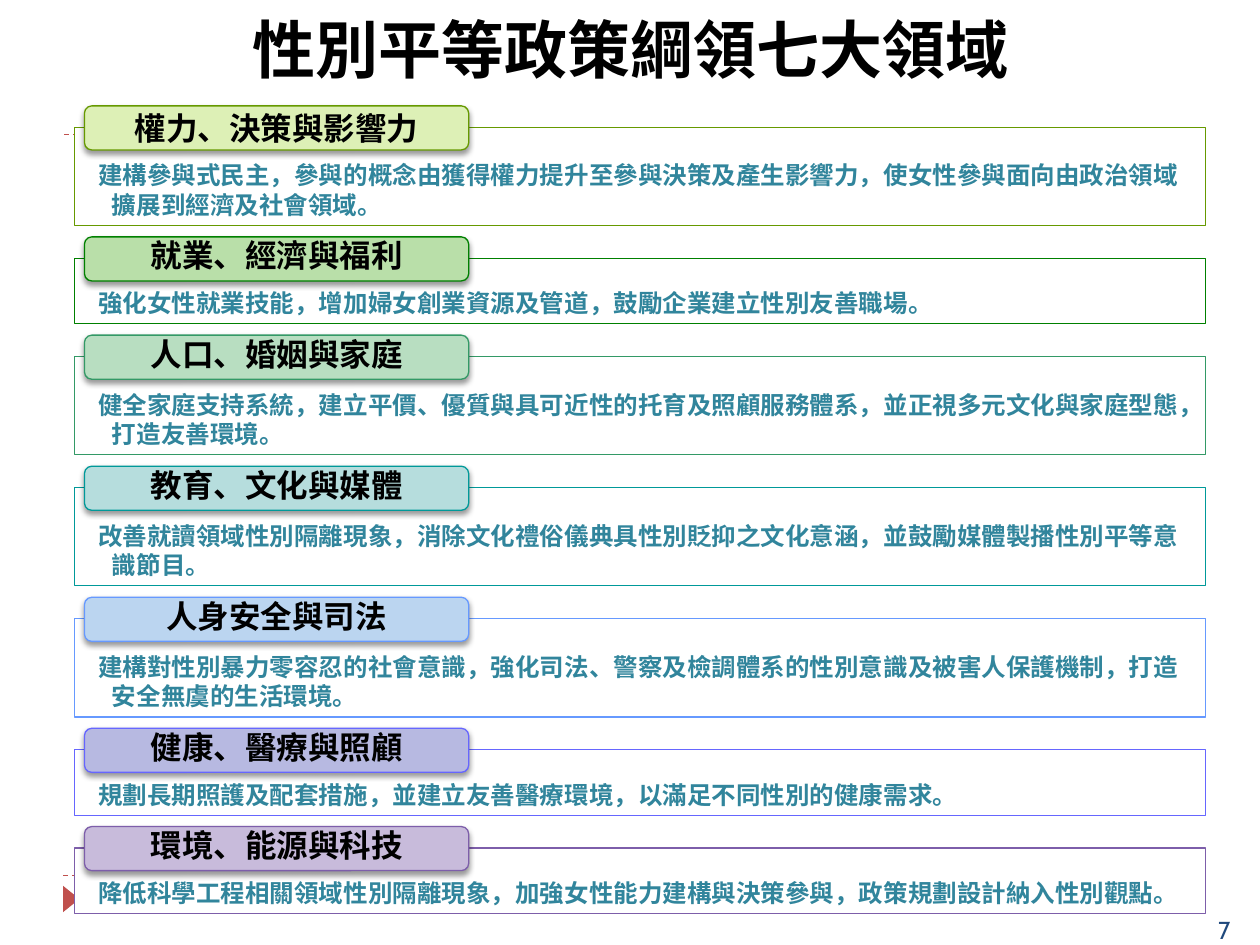
from lxml import etree
from pptx import Presentation
from pptx.dml.color import RGBColor as RGB
from pptx.enum.dml import MSO_LINE as Dash
from pptx.enum.shapes import MSO_CONNECTOR as Link, MSO_SHAPE as Form
from pptx.enum.text import MSO_ANCHOR as Anchor, PP_ALIGN as Align
from pptx.oxml.ns import qn
from pptx.util import Inches, Pt

HUES = {"ink": "000000", "body": "31859C", "page": "FFFFFF", "rule": "C0504D", "num": "1F497D"}

ROWS = [
    ("權力、決策與影響力", "建構參與式民主，參與的概念由獲得權力提升至參與決策及產生影響力，使女性參與面向由政治領域擴展到經濟及社會領域。",
     "669900", "DDF0B6", 0.78, 1),
    ("就業、經濟與福利", "強化女性就業技能，增加婦女創業資源及管道，鼓勵企業建立性別友善職場。",
     "008000", "B9DFA9", 0.52, 0.8),
    ("人口、婚姻與家庭", "健全家庭支持系統，建立平價、優質與具可近性的托育及照顧服務體系，並正視多元文化與家庭型態，打造友善環境。",
     "339966", "B8DEC1", 0.78, 0.8),
    ("教育、文化與媒體", "改善就讀領域性別隔離現象，消除文化禮俗儀典具性別貶抑之文化意涵，並鼓勵媒體製播性別平等意識節目。",
     "009999", "B6DDDD", 0.78, 0.8),
    ("人身安全與司法", "建構對性別暴力零容忍的社會意識，強化司法、警察及檢調體系的性別意識及被害人保護機制，打造安全無虞的生活環境。",
     "6699FF", "BBD5F0", 0.78, 0.8),
    ("健康、醫療與照顧", "規劃長期照護及配套措施，並建立友善醫療環境，以滿足不同性別的健康需求。",
     "6666FF", "B7B9E1", 0.52, 0.8),
    ("環境、能源與科技", "降低科學工程相關領域性別隔離現象，加強女性能力建構與決策參與，政策規劃設計納入性別觀點。",
     "7D5EAA", "C8BBDB", 0.52, 0.8),
]


def write(shape, text, size=14, hue="ink", face="Arial", bold=True, align=Align.LEFT,
          anchor=Anchor.MIDDLE, pads=(0.1, 0.05, 0.1, 0.05), space=None, hang=None):
    """Put formatted text in a shape."""
    frame = shape.text_frame
    frame.word_wrap = True
    frame.vertical_anchor = anchor
    (frame.margin_left, frame.margin_top,
     frame.margin_right, frame.margin_bottom) = map(Inches, pads)
    para = frame.paragraphs[0]
    para.alignment = align
    if space:
        para.line_spacing = space
    if hang:
        props = para._p.get_or_add_pPr()
        props.set("marL", str(Inches(hang[0])))
        props.set("indent", str(Inches(hang[1])))
    run = para.add_run()
    run.text = text
    font = run.font
    font.name, font.size, font.bold = face, Pt(size), bold
    font.color.rgb = RGB.from_string(HUES[hue])


class Deck:
    """Holds the style and the current slide."""

    def __init__(self):
        """Start a deck with one title-only slide."""
        self.file = Presentation()
        self.file.slide_width, self.file.slide_height = Inches(10), Inches(7.5)
        self.slide = self.file.slides.add_slide(self.file.slide_layouts[5])
        self.shapes = self.slide.shapes

    def title(self, text):
        """Place and fill the title."""
        head = self.shapes.title
        head.left, head.top, head.width, head.height = map(Inches, (0, 0, 10, 0.76))
        write(head, text, size=36, align=Align.CENTER)

    def rule(self, left, top, width):
        """Draw a dashed level line."""
        line = self.shapes.add_connector(
            Link.STRAIGHT, *map(Inches, (left, top, left + width, top)))
        line.line.color.rgb = RGB.from_string(HUES["rule"])
        line.line.width = Pt(0.75)
        line.line.dash_style = Dash.DASH
        etree.SubElement(line._element.spPr, qn("a:effectLst"))

    def block(self, form, box, fill, edge=None):
        """Draw a filled shape with an optional outline."""
        shape = self.shapes.add_shape(form, *map(Inches, box))
        shape.shadow.inherit = False
        shape.fill.solid()
        shape.fill.fore_color.rgb = RGB.from_string(fill)
        if edge:
            shape.line.color.rgb = RGB.from_string(edge)
            shape.line.width = Pt(0.75)
        else:
            shape.line.fill.background()
        return shape

    def mark(self):
        """Draw the small arrow at the foot."""
        self.block(Form.ISOSCELES_TRIANGLE, (0.46, 7.07, 0.21, 0.13), HUES["rule"]).rotation = 90

    def shade(self, shape):
        """Give a shape a soft shadow below."""
        effects = shape._element.spPr.find(qn("a:effectLst"))
        shadow = etree.SubElement(effects, qn("a:outerShdw"), blurRad=str(Pt(3)),
                                  dist=str(Pt(2)), dir="5400000", rotWithShape="0")
        black = etree.SubElement(shadow, qn("a:srgbClr"), val=HUES["ink"])
        etree.SubElement(black, qn("a:alpha"), val="40000")

    def field(self, top, name, text, edge, fill, high, space):
        """Draw one policy field: a framed text under a tag."""
        frame = self.block(Form.RECTANGLE, (0.59, top, 8.98, high), HUES["page"], edge)
        write(frame, text, hue="body", anchor=Anchor.BOTTOM, hang=(0.2, -0.11))
        tag = self.block(Form.ROUNDED_RECTANGLE, (0.67, top - 0.17, 3.05, 0.35), fill, edge)
        self.shade(tag)
        write(tag, name, size=18, align=Align.CENTER, space=space, pads=(0.1, 0, 0.1, 0))

    def number(self, text):
        """Add the page number."""
        box = self.shapes.add_textbox(*map(Inches, (9.57, 7.21, 0.43, 0.29)))
        write(box, text, hue="num", face="Cabin", bold=False, anchor=Anchor.TOP)


def main():
    """Build the slide and save it."""
    deck = Deck()
    deck.rule(0.5, 6.95, 9)
    deck.rule(0.51, 1.07, 9)
    deck.mark()
    top, gap = 1.01, 0.26
    for name, text, edge, fill, high, space in ROWS:
        deck.field(top, name, text, edge, fill, high, space)
        top += high + gap
    deck.title("性別平等政策綱領七大領域")
    deck.number("7")
    deck.file.save("out.pptx")


if __name__ == "__main__":
    main()
